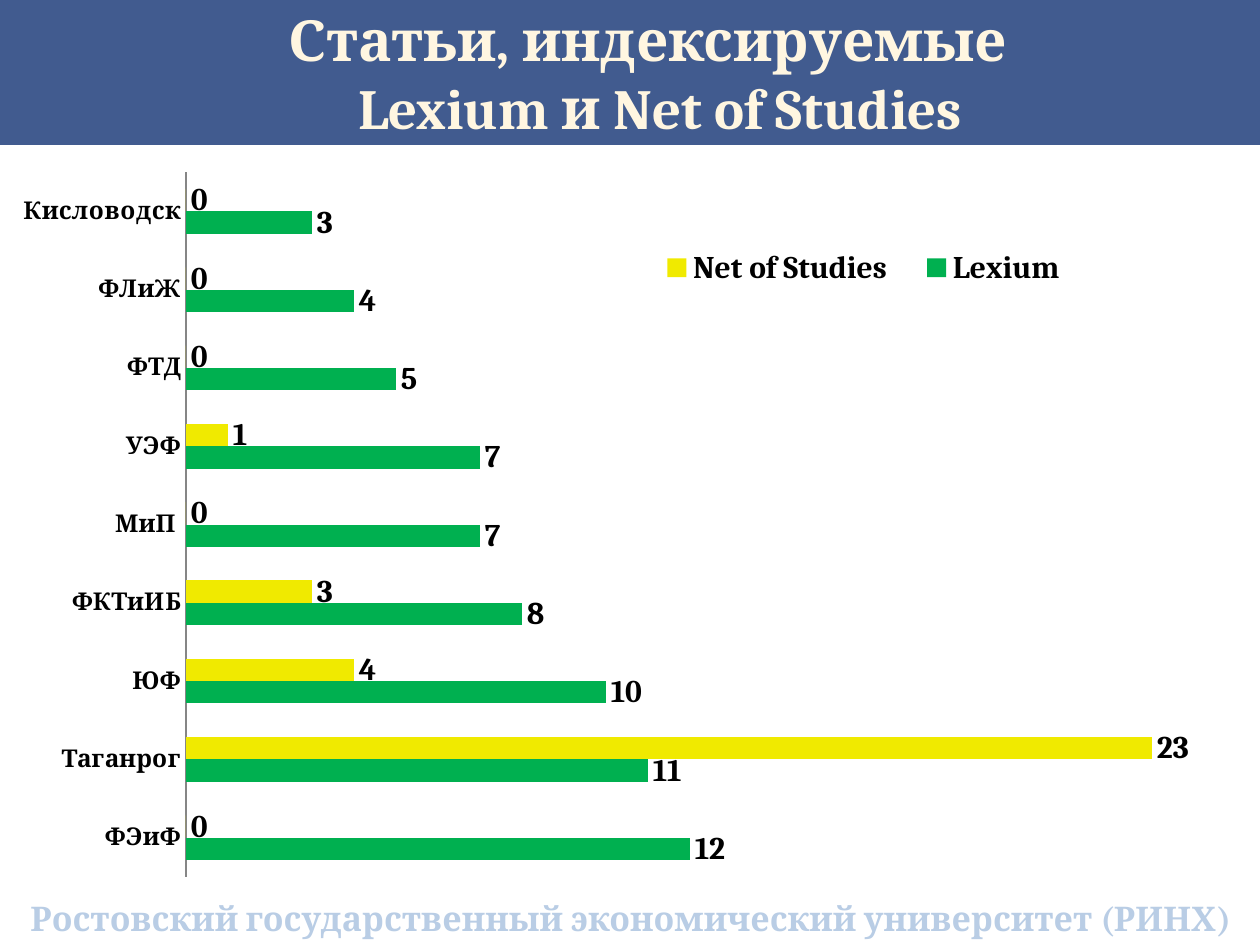
from dataclasses import dataclass

from lxml.etree import SubElement
from pptx import Presentation
from pptx.chart.data import CategoryChartData
from pptx.dml.color import RGBColor
from pptx.enum.chart import XL_CHART_TYPE, XL_LABEL_POSITION, XL_LEGEND_POSITION, XL_TICK_MARK
from pptx.enum.text import MSO_ANCHOR, MSO_AUTO_SIZE, PP_ALIGN
from pptx.oxml import parse_xml
from pptx.oxml.ns import nsdecls, qn
from pptx.util import Pt


@dataclass(frozen=True)
class Theme:
    """Colours, font and type sizes of the slide."""
    font: str = "Cambria"
    band: str = "415B8F"
    cream: str = "FFF6E1"
    pale: str = "B9CDE5"
    ink: str = "000000"
    axis: str = "868686"
    green: str = "00B050"
    yellow: str = "F0EA00"
    head: float = 32.4
    foot: float = 19.4
    label: int = 18
    tick: int = 14


THEME = Theme()
UNITS = ["ФЭиФ", "Таганрог", "ЮФ", "ФКТиИБ", "МиП ", "УЭФ", "ФТД", "ФЛиЖ", "Кисловодск"]
SERIES = [
    ("Lexium", [12, 11, 10, 8, 7, 7, 5, 4, 3], THEME.green),
    ("Net of Studies", [0, 23, 4, 3, 0, 1, 0, 0, 0], THEME.yellow),
]
HEAD = [("Статьи, индексируемые", 36), ("Lexium и Net of Studies", 60)]
FOOT = "Ростовский государственный экономический университет (РИНХ)"


def px(n):
    """Turn pixels into EMU."""
    return round(n * 914400 / 126)


def style(font, size, color):
    """Set a bold theme font."""
    font.name, font.size, font.bold = THEME.font, Pt(size), True
    font.color.rgb = RGBColor.from_string(color)


def place(shape, left, top, width, height):
    """Set the box of a shape in pixels."""
    shape.left, shape.top = px(left), px(top)
    shape.width, shape.height = px(width), px(height)


def add_line(para, text, size, color, gap):
    """Fill a centred paragraph with one run."""
    para.alignment, para.line_spacing = PP_ALIGN.CENTER, gap
    para.space_before = Pt(0)
    run = para.add_run()
    run.text = text
    style(run.font, size, color)
    return run


def add_edge(run, color):
    """Outline the letters of a run."""
    edge = parse_xml(
        f'<a:ln w="9525" {nsdecls("a")}><a:solidFill><a:srgbClr val="{color}"/>'
        "</a:solidFill></a:ln>")
    run.font._element.insert(0, edge)


def add_head(slide):
    """Format the title as a band across the top."""
    title = slide.shapes.title
    place(title, 0, 0, 1260, 145)
    title.fill.solid()
    title.fill.fore_color.rgb = RGBColor.from_string(THEME.band)
    frame = title.text_frame
    frame.word_wrap, frame.auto_size = True, MSO_AUTO_SIZE.NONE
    frame.vertical_anchor = MSO_ANCHOR.MIDDLE
    for i, (text, indent) in enumerate(HEAD):
        para = frame.add_paragraph() if i else frame.paragraphs[0]
        run = add_line(para, text, THEME.head, THEME.cream, 1.0)
        para._p.get_or_add_pPr().set("marL", str(px(indent)))
        add_edge(run, THEME.cream)


def add_layout(part, x, y, w, h, inner=False):
    """Put a chart part at fractions of the chart."""
    for old in part.findall(qn("c:layout")):
        part.remove(old)
    layout = parse_xml(f'<c:layout {nsdecls("c")}/>')
    manual = SubElement(layout, qn("c:manualLayout"))
    pairs = [("layoutTarget", "inner")] if inner else []
    pairs += [("xMode", "edge"), ("yMode", "edge"), ("x", x), ("y", y), ("w", w), ("h", h)]
    for tag, val in pairs:
        SubElement(manual, qn(f"c:{tag}")).set("val", str(val))
    part.insert(0 if inner else 1, layout)


def add_bars(slide):
    """Add the clustered bar chart."""
    data = CategoryChartData()
    data.categories = UNITS
    for name, vals, _ in SERIES:
        data.add_series(name, vals)
    box = [px(n) for n in (15, 165, 1221, 734)]
    chart = slide.shapes.add_chart(XL_CHART_TYPE.BAR_CLUSTERED, *box, data).chart
    style(chart.font, THEME.tick, THEME.ink)
    chart.has_title = False
    plot = chart.plots[0]
    plot.gap_width, plot.overlap, plot.vary_by_categories = 150, 0, False
    for bar, (_, _, color) in zip(plot.series, SERIES):
        bar.format.fill.solid()
        bar.format.fill.fore_color.rgb = RGBColor.from_string(color)
        labels = bar.data_labels
        labels.show_value, labels.position = True, XL_LABEL_POSITION.OUTSIDE_END
        style(labels.font, THEME.label, THEME.ink)
    cats, vals = chart.category_axis, chart.value_axis
    cats.major_tick_mark = XL_TICK_MARK.NONE
    cats.format.line.color.rgb = RGBColor.from_string(THEME.axis)
    vals.minimum_scale, vals.maximum_scale = 0, 25
    vals.visible = vals.has_major_gridlines = False
    chart.has_legend = True
    legend = chart.legend
    legend.position, legend.include_in_layout = XL_LEGEND_POSITION.TOP, False
    style(legend.font, THEME.label, THEME.ink)
    add_layout(legend._element, 0.51, 0.1, 0.37, 0.08)
    area = chart._chartSpace.find(f".//{qn('c:plotArea')}")
    add_layout(area, 0.14, 0.01, 0.86, 0.96, True)


def add_foot(slide):
    """Add the university name at the bottom."""
    box = slide.shapes.add_textbox(0, 0, 0, 0)
    place(box, 1, 879, 1260, 66)
    box.text_frame.word_wrap = True
    add_line(box.text_frame.paragraphs[0], FOOT, THEME.foot, THEME.pale, 1.3)


def main():
    """Build and save the slide."""
    deck = Presentation()
    deck.slide_width, deck.slide_height = px(1260), px(945)
    slide = deck.slides.add_slide(deck.slide_layouts[5])
    add_head(slide)
    add_bars(slide)
    add_foot(slide)
    deck.save("out.pptx")


if __name__ == "__main__":
    main()
